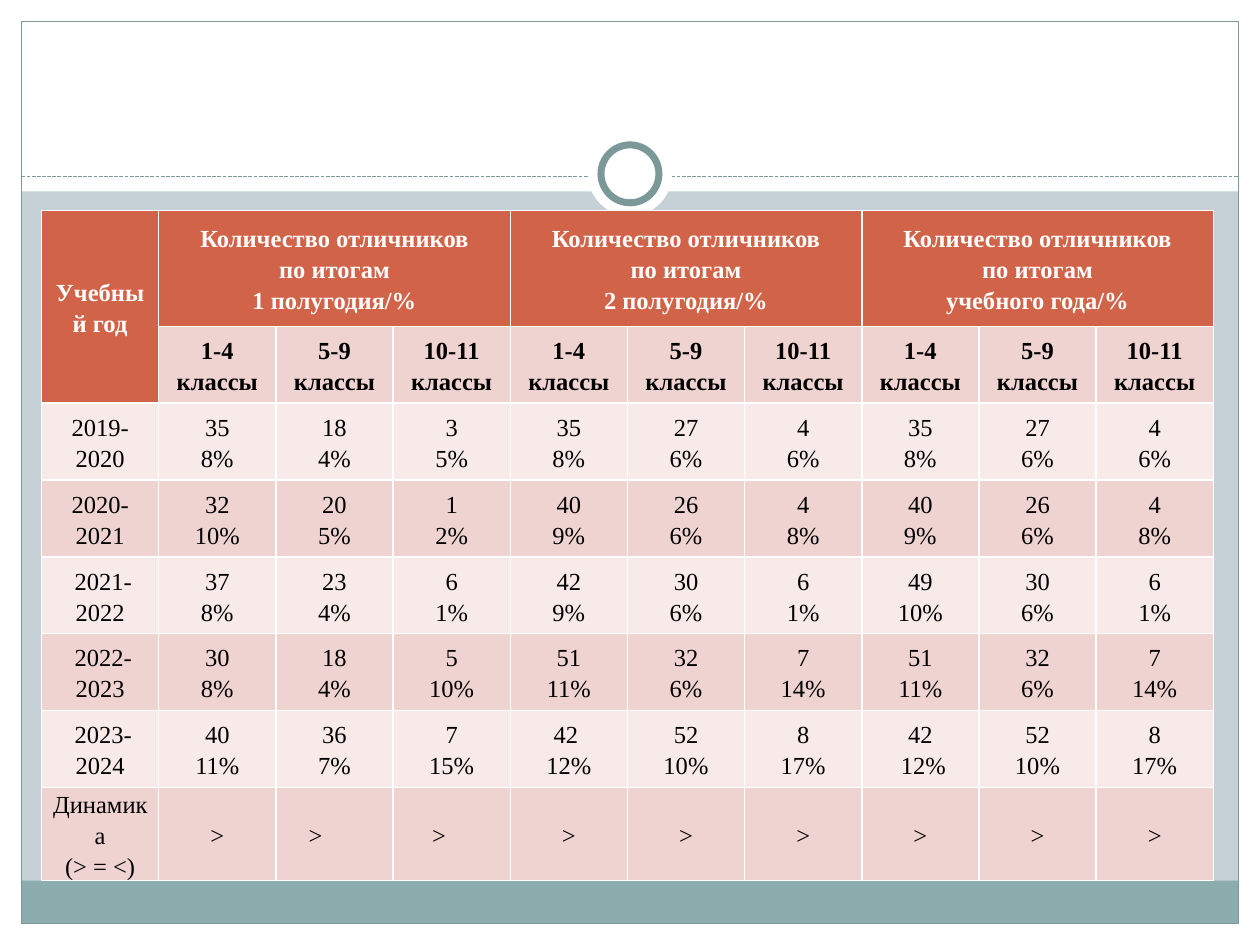
"""Build a slide with a table of top pupils by school year."""
from typing import NamedTuple, Optional

from lxml import etree
from pptx import Presentation
from pptx import util as u
from pptx.dml.color import RGBColor
from pptx.enum import dml, shapes, text
from pptx.oxml.ns import qn

WHITE = RGBColor(0xFF, 0xFF, 0xFF)
BLACK = RGBColor(0x00, 0x00, 0x00)
BACKGROUND = RGBColor(0xC5, 0xD1, 0xD7)
TEAL = RGBColor(0x8C, 0xAD, 0xAE)
FRAME = RGBColor(0x7C, 0x99, 0x9A)
HEADER = RGBColor(0xD1, 0x63, 0x49)
BANDS = (RGBColor(0xF7, 0xEA, 0xE9), RGBColor(0xEE, 0xD3, 0xD0))
FONT = "Times New Roman"
WIDTH, HEIGHT = 10, 7.5
EDGE = 0.17
COLUMN, ROW, HEADER_ROW = 0.93, 0.61, 0.92
INDENTS = {2: 0.19, 3: 0.24}


class Panel(NamedTuple):
    left: float
    top: float
    width: float
    height: float
    fill: Optional[RGBColor] = WHITE
    line: Optional[RGBColor] = None
    weight: float = 0.75
    kind: shapes.MSO_SHAPE = shapes.MSO_SHAPE.RECTANGLE


def ring(size: float, **style) -> Panel:
    return Panel((WIDTH - size) / 2, 1.38 - size / 2, size, size,
                 kind=shapes.MSO_SHAPE.OVAL, **style)


PANELS = (
    Panel(0, HEIGHT - EDGE, WIDTH, EDGE),
    Panel(0, 0, WIDTH, 1.52),
    Panel(0, 0, EDGE, HEIGHT),
    Panel(WIDTH - EDGE, 0, EDGE, HEIGHT),
    Panel(EDGE, 6.99, WIDTH - 2 * EDGE, 0.34, TEAL),
    Panel(EDGE, EDGE, WIDTH - 2 * EDGE, HEIGHT - 2 * EDGE, None, FRAME),
)
RINGS = (ring(0.67), ring(0.46, line=FRAME, weight=4))

PERIODS = ("1 полугодия/%", "2 полугодия/%", "учебного года/%")
GRADES = ("1-4 классы", "5-9 классы", "10-11 классы")
RESULTS = (
    ("2019-2020", "35/8%", "18/4%", "3/5%", "35/8%", "27/6%", "4/6%", "35/8%", "27/6%", "4/6%"),
    ("2020-2021", "32/10%", "20/5%", "1/2%", "40/9%", "26/6%", "4/8%", "40/9%", "26/6%", "4/8%"),
    (" 2021-2022", "37/8%", "23/4%", "6/1%", "42/9%", "30/6%", "6/1%", "49/10%", "30/6%", "6/1%"),
    (" 2022-2023", "30/8%", "18/4%", "5/10%", "51/11%", "32/6%", "7/14%", "51/11%", "32/6%", "7/14%"),
    (" 2023-2024", "40/11%", "36/7%", "7/15%", "42 /12%", "52/10%", "8/17%", "42/ 12%", "52/10%", "8/17%"),
    ("Динамика/(> = <)",) + (">",) * 9,
)


def add_panel(s, panel: Panel) -> None:
    sp = s.shapes.add_shape(panel.kind, *(u.Inches(v) for v in panel[:4]))
    sp.shadow.inherit = False
    if panel.fill is None:
        sp.fill.background()
    else:
        sp.fill.solid()
        sp.fill.fore_color.rgb = panel.fill
    if panel.line is None:
        sp.line.fill.background()
    else:
        sp.line.color.rgb = panel.line
        sp.line.width = u.Pt(panel.weight)


def add_divider(s, y: float) -> None:
    cx = s.shapes.add_connector(shapes.MSO_CONNECTOR.STRAIGHT, u.Inches(EDGE), u.Inches(y),
                                u.Inches(WIDTH - EDGE), u.Inches(y))
    cx.line.color.rgb = FRAME
    cx.line.width = u.Pt(0.75)
    cx.line.dash_style = dml.MSO_LINE.SQUARE_DOT
    etree.SubElement(cx._element.spPr, qn("a:effectLst"))


def write(cell, lines: list[str], *, fill: RGBColor, color: RGBColor = BLACK,
          bold: bool = False, indent: Optional[float] = None) -> None:
    cell.fill.solid()
    cell.fill.fore_color.rgb = fill
    cell.vertical_anchor = text.MSO_ANCHOR.MIDDLE
    cell.margin_left = cell.margin_right = u.Inches(0.07)
    cell.margin_top = cell.margin_bottom = 0
    tf = cell.text_frame
    for i, line in enumerate(lines):
        p = tf.add_paragraph() if i else tf.paragraphs[0]
        p.line_spacing = 1.15
        if indent is None:
            p.alignment = text.PP_ALIGN.CENTER
        else:
            p.alignment = text.PP_ALIGN.LEFT
            p._p.get_or_add_pPr().set("marL", str(u.Inches(indent)))
        r = p.add_run()
        r.text = line
        r.font.name, r.font.size, r.font.bold = FONT, u.Pt(14), bold
        r.font.color.rgb = color


def add_results(s) -> None:
    rows, cols = len(RESULTS) + 2, len(RESULTS[0])
    table = s.shapes.add_table(rows, cols, u.Inches(0.33), u.Inches(1.67), u.Inches(COLUMN * cols),
                               u.Inches(HEADER_ROW + ROW * (rows - 1))).table
    for column in table.columns:
        column.width = u.Inches(COLUMN)
    for i, row in enumerate(table.rows):
        row.height = u.Inches(ROW if i else HEADER_ROW)

    header = dict(fill=HEADER, color=WHITE, bold=True)
    table.cell(0, 0).merge(table.cell(1, 0))
    write(table.cell(0, 0), ["Учебный год"], **header)
    for i, period in enumerate(PERIODS):
        first = 1 + i * len(GRADES)
        table.cell(0, first).merge(table.cell(0, first + len(GRADES) - 1))
        write(table.cell(0, first), ["Количество отличников", "по итогам", period], **header)
        for j, grade in enumerate(GRADES):
            write(table.cell(1, first + j), [grade], fill=BANDS[1], bold=True)
    for i, values in enumerate(RESULTS):
        last = i == len(RESULTS) - 1
        for j, value in enumerate(values):
            write(table.cell(i + 2, j), value.split("/"), fill=BANDS[i % 2],
                  indent=INDENTS.get(j) if last else None)


def main() -> None:
    prs = Presentation()
    prs.slide_width, prs.slide_height = u.Inches(WIDTH), u.Inches(HEIGHT)
    s = prs.slides.add_slide(prs.slide_layouts[6])
    s.background.fill.solid()
    s.background.fill.fore_color.rgb = BACKGROUND
    for panel in PANELS:
        add_panel(s, panel)
    add_divider(s, 1.4)
    for circle in RINGS:
        add_panel(s, circle)
    add_results(s)
    prs.save("out.pptx")


if __name__ == "__main__":
    main()
